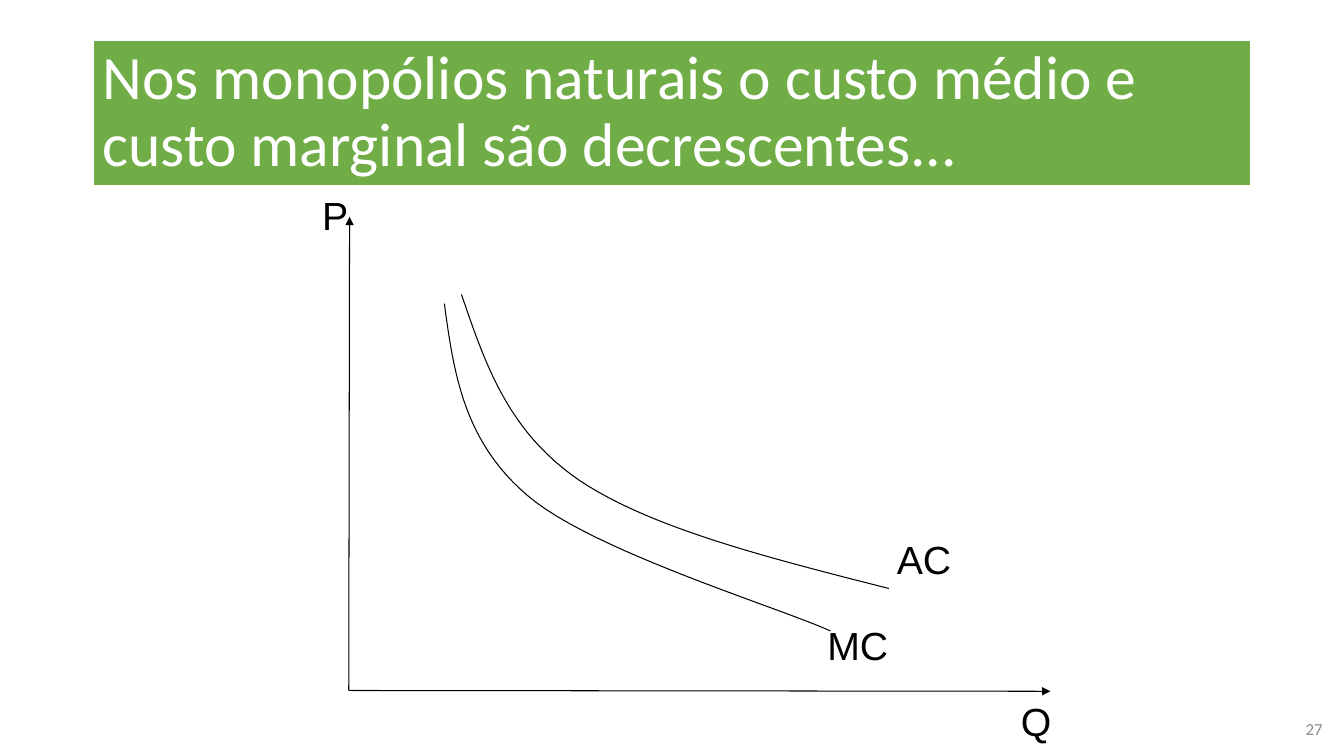
from lxml.etree import SubElement
from pptx import Presentation
from pptx.dml.color import RGBColor
from pptx.enum.shapes import MSO_CONNECTOR
from pptx.enum.text import MSO_ANCHOR, MSO_AUTO_SIZE, PP_ALIGN
from pptx.oxml.ns import qn
from pptx.util import Cm, Pt

COLORS = {"banner": "70AD47", "white": "FFFFFF", "ink": "000000", "number": "8C8C8C"}
CURVE_STEPS = 24

TITLE_BOX = (2.33, 1.01, 29.21, 3.68)
CHART_BOX = (8.79, 5.46, 17.68, 11.94)
NUMBER_BOX = (31.93, 17.86, 1.65, 1.02)

AVERAGE_COST = [(2.84, 1.96), (3.43, 3.68), (3.99, 5.39), (5.79, 6.63),
                (7.59, 7.85), (10.62, 8.61), (13.61, 9.37)]
MARGINAL_COST = [(2.41, 2.19), (2.64, 3.91), (2.89, 5.67), (4.52, 7.04),
                 (6.15, 8.43), (10.87, 9.86), (12.14, 10.44)]


def color(name):
    return RGBColor.from_string(COLORS[name])


def style_text(frame, text, font_name, size, ink, align=PP_ALIGN.LEFT):
    frame.text = text
    frame.word_wrap = True
    paragraph = frame.paragraphs[0]
    paragraph.alignment = align
    font = paragraph.font
    font.name, font.size = font_name, Pt(size)
    font.color.rgb = color(ink)
    return paragraph


def style_line(shape):
    shape.line.color.rgb = color("ink")
    shape.line.width = Pt(0.75)


def add_title(page, box):
    title = page.shapes.title
    title.left, title.top, title.width, title.height = map(Cm, box)
    title.fill.solid()
    title.fill.fore_color.rgb = color("banner")
    title.line.color.rgb = color("white")
    title.line.width = Pt(1.5)
    frame = title.text_frame
    frame.auto_size = MSO_AUTO_SIZE.NONE
    frame.vertical_anchor = MSO_ANCHOR.MIDDLE
    paragraph = style_text(
        frame,
        "Nos monopólios naturais o custo médio e custo marginal são decrescentes...",
        "Calibri", 44, "white")
    paragraph.line_spacing = 0.9
    paragraph.space_before = Pt(0)


def add_axis(page, start, end):
    axis = page.shapes.add_connector(
        MSO_CONNECTOR.STRAIGHT, *map(Cm, start), *map(Cm, end))
    style_line(axis)
    SubElement(axis.line._get_or_add_ln(), qn("a:tailEnd"), type="triangle")
    SubElement(axis._element.spPr, qn("a:effectLst"))


def bezier_points(controls):
    for first in range(0, len(controls) - 1, 3):
        segment = controls[first:first + 4]
        for step in range(1, CURVE_STEPS + 1):
            t = step / CURVE_STEPS
            weights = ((1 - t) ** 3, 3 * t * (1 - t) ** 2, 3 * t ** 2 * (1 - t), t ** 3)
            yield tuple(sum(weight * point[axis] for weight, point in zip(weights, segment))
                        for axis in (0, 1))


def add_curve(page, left, top, controls):
    def place(point):
        return Cm(left + point[0]), Cm(top + point[1])

    builder = page.shapes.build_freeform(*place(controls[0]))
    builder.add_line_segments(map(place, bezier_points(controls)), close=False)
    curve = builder.convert_to_shape()
    curve.fill.background()
    curve.shadow.inherit = False
    style_line(curve)


def add_cost_chart(page, box):
    left, top, width, height = box
    origin = (left, top + height)
    add_axis(page, origin, (left + width, top + height + 0.02))
    add_axis(page, origin, (left + 0.02, top))
    labels = [("Q", 16.69, 11.99, 1.37), ("P", -0.92, -0.76, 1.35),
              ("AC", 13.56, 7.9, 4.32), ("MC", 11.81, 10.06, 4.32)]
    for text, x, y, label_width in labels:
        label = page.shapes.add_textbox(
            Cm(left + x), Cm(top + y), Cm(label_width), Cm(1.45))
        style_text(label.text_frame, text, "Arial", 28, "ink")
    for controls in (MARGINAL_COST, AVERAGE_COST):
        add_curve(page, left, top, controls)


def add_page_number(page, box):
    number = page.shapes.add_textbox(*map(Cm, box))
    number.text_frame.vertical_anchor = MSO_ANCHOR.MIDDLE
    style_text(number.text_frame, "27", "Calibri", 12, "number", PP_ALIGN.RIGHT)


def main():
    deck = Presentation()
    deck.slide_width, deck.slide_height = Cm(33.87), Cm(19.05)
    page = deck.slides.add_slide(deck.slide_layouts.get_by_name("Title Only"))
    add_title(page, TITLE_BOX)
    add_page_number(page, NUMBER_BOX)
    add_cost_chart(page, CHART_BOX)
    deck.save("out.pptx")


if __name__ == "__main__":
    main()
